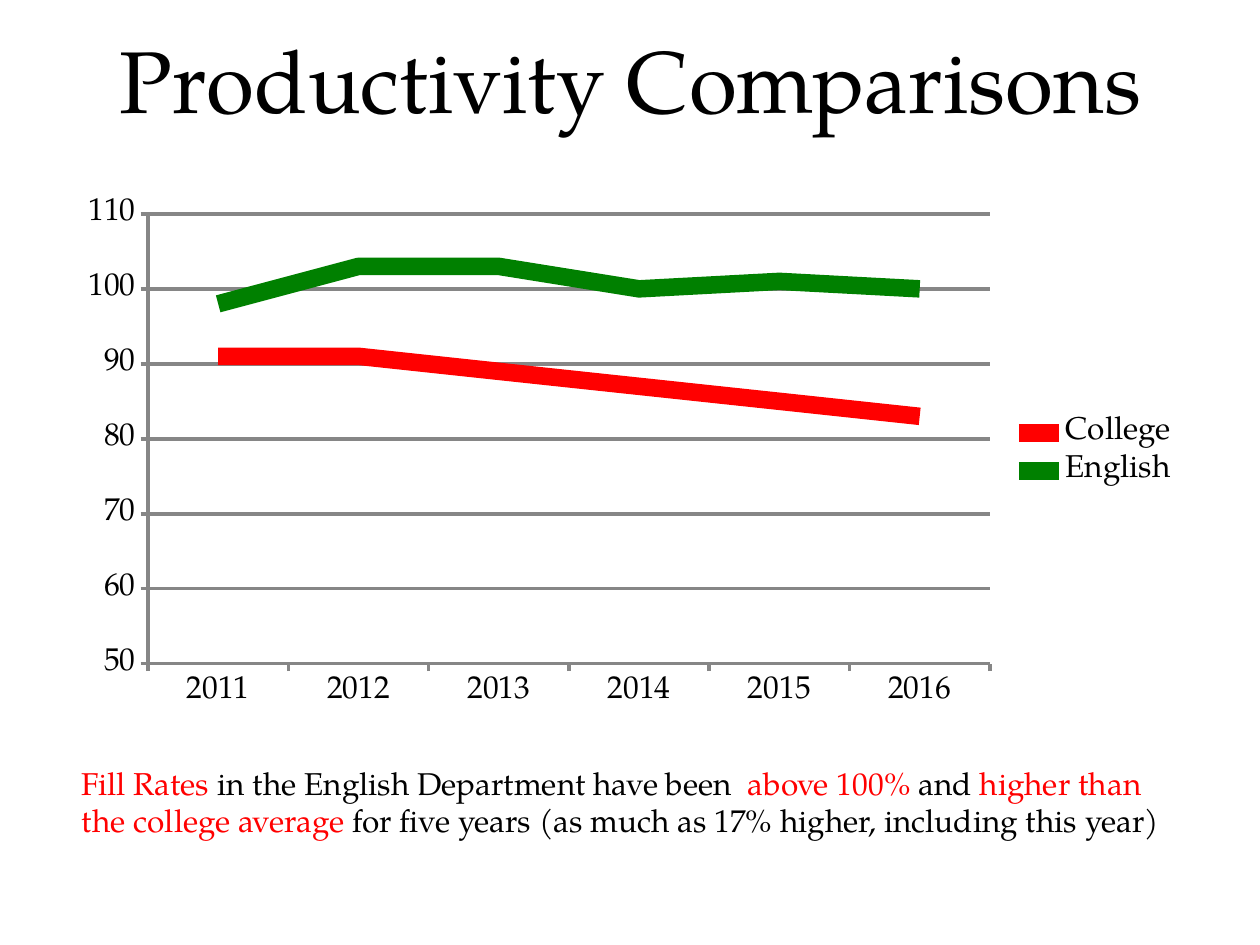
from dataclasses import dataclass

from lxml.etree import SubElement
from pptx import Presentation
from pptx.chart.data import CategoryChartData
from pptx.dml.color import RGBColor
from pptx.enum.chart import XL_CHART_TYPE, XL_LEGEND_POSITION, XL_MARKER_STYLE, XL_TICK_MARK
from pptx.enum.text import MSO_ANCHOR, PP_ALIGN
from pptx.oxml.ns import qn
from pptx.util import Cm, Pt

FONT = "TeX Gyre Pagella"
BLACK = RGBColor(0, 0, 0)
RED = RGBColor(255, 0, 0)
GREEN = RGBColor(0, 128, 0)
GRAY = RGBColor(134, 134, 134)
LEFT, WIDTH = Cm(1.4), Cm(22.63)


@dataclass
class Part:
    text: str
    color: RGBColor = BLACK


@dataclass
class Line:
    name: str
    vals: list[int]
    color: RGBColor


YEARS = [str(year) for year in range(2011, 2017)]
LINES = [
    Line("College", [91, 91, 89, 87, 85, 83], RED),
    Line("English", [98, 103, 103, 100, 101, 100], GREEN),
]
TITLE = [Part("Productivity Comparisons")]
NOTE = [
    Part("Fill Rates ", RED),
    Part("in the English Department have been  "),
    Part("above 100% ", RED),
    Part("and "),
    Part("higher than the college average ", RED),
    Part("for five years (as much as 17% higher, including this year)"),
]


def add_text(slide, top: Cm, height: Cm, parts: list[Part], size: int,
             align=PP_ALIGN.LEFT, anchor=MSO_ANCHOR.TOP) -> None:
    frame = slide.shapes.add_textbox(LEFT, top, WIDTH, height).text_frame
    frame.word_wrap = True
    frame.vertical_anchor = anchor
    para = frame.paragraphs[0]
    para.alignment = align
    for part in parts:
        run = para.add_run()
        run.text = part.text
        run.font.name = FONT
        run.font.size = Pt(size)
        run.font.color.rgb = part.color


def set_line(line, color: RGBColor, width: float) -> None:
    line.color.rgb = color
    line.width = Pt(width)


def set_plot(chart, **box: float) -> None:
    """Fix the inner plot area as fractions of the chart."""
    area = chart.plots[0]._element.getparent()
    layout = area.find(qn("c:layout"))
    if layout is None:
        layout = SubElement(area, qn("c:layout"))
        area.insert(0, layout)
    manual = SubElement(layout, qn("c:manualLayout"))
    rules = {"layoutTarget": "inner", "xMode": "edge", "yMode": "edge", **box}
    for key, val in rules.items():
        SubElement(manual, qn(f"c:{key}")).set("val", str(val))


def add_lines(slide, top: Cm, height: Cm) -> None:
    data = CategoryChartData()
    data.categories = YEARS
    for line in LINES:
        data.add_series(line.name, line.vals)
    chart = slide.shapes.add_chart(
        XL_CHART_TYPE.LINE, LEFT, top, WIDTH, height, data).chart
    chart.has_title = False
    chart.font.name = FONT
    chart.font.size = Pt(18)
    chart.font.color.rgb = BLACK
    set_plot(chart, x=0.07, y=0.05, w=0.75, h=0.85)

    # Series
    chart.plots[0].vary_by_categories = False
    for series, line in zip(chart.plots[0].series, LINES):
        series.smooth = False
        series.marker.style = XL_MARKER_STYLE.NONE
        set_line(series.format.line, line.color, 10)

    # Axes and grid
    for axis in (chart.category_axis, chart.value_axis):
        axis.major_tick_mark = XL_TICK_MARK.OUTSIDE
        axis.minor_tick_mark = XL_TICK_MARK.NONE
        set_line(axis.format.line, GRAY, 2)
    scale = chart.value_axis
    scale.minimum_scale, scale.maximum_scale, scale.major_unit = 50, 110, 10
    scale.tick_labels.number_format = "0"
    scale.tick_labels.number_format_is_linked = False
    scale.has_major_gridlines = True
    set_line(scale.major_gridlines.format.line, GRAY, 2)

    # Legend
    chart.has_legend = True
    chart.legend.position = XL_LEGEND_POSITION.RIGHT
    chart.legend.include_in_layout = False


def main() -> None:
    deck = Presentation()
    deck.slide_width, deck.slide_height = Cm(25.4), Cm(19.05)
    slide = deck.slides.add_slide(deck.slide_layouts[6])
    add_text(slide, Cm(0.25), Cm(2.51), TITLE, 50,
             PP_ALIGN.CENTER, MSO_ANCHOR.BOTTOM)
    add_lines(slide, Cm(3.78), Cm(10.67))
    add_text(slide, Cm(15.27), Cm(1.8), NOTE, 18)
    deck.save("out.pptx")


if __name__ == "__main__":
    main()
